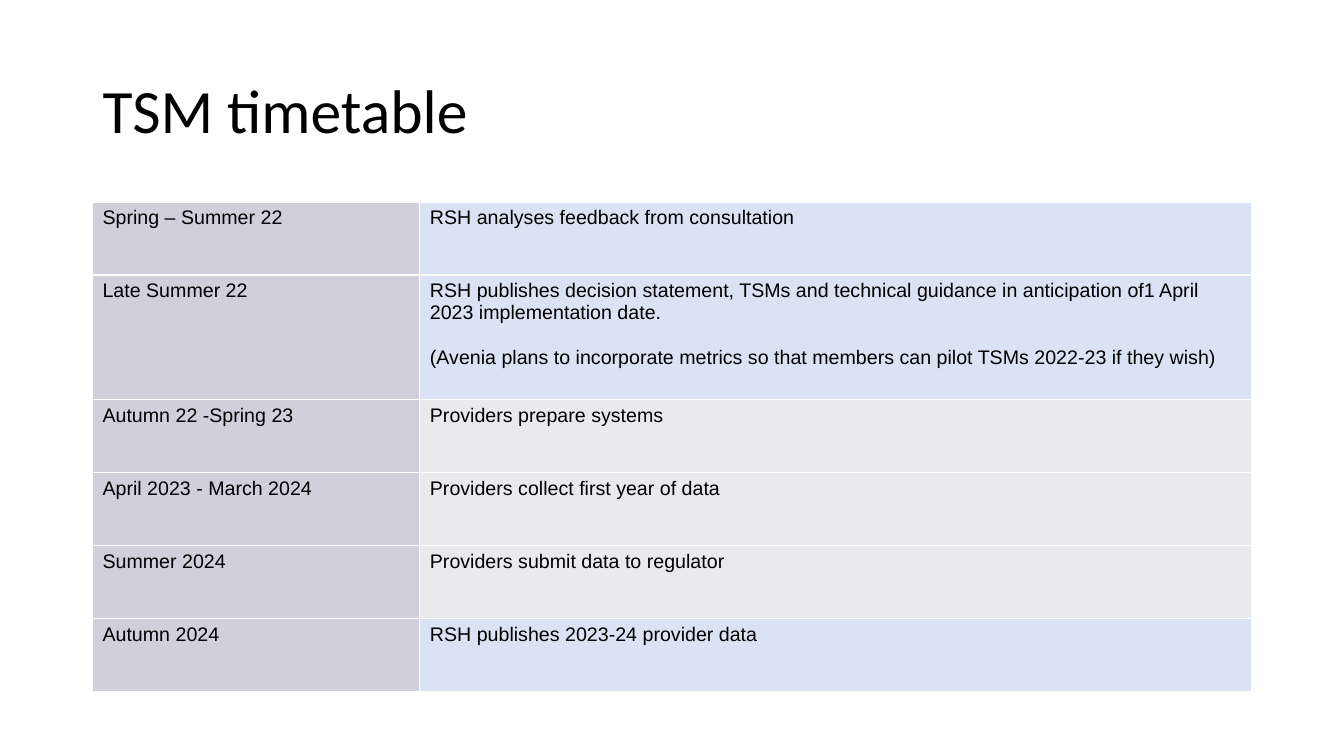
from dataclasses import dataclass

from lxml.etree import SubElement
from pptx import Presentation
from pptx.dml.color import RGBColor
from pptx.enum.text import MSO_ANCHOR, PP_ALIGN
from pptx.oxml.ns import qn
from pptx.util import Cm, Pt


@dataclass(frozen=True)
class Theme:
    """Colours, fonts and type sizes of the slide."""
    text: str = "000000"
    border: str = "FFFFFF"
    period: str = "D1CFDB"
    regulator: str = "DAE3F3"
    provider: str = "EAE9EE"
    title_font: str = "Calibri"
    body_font: str = "Arial"
    title_size: int = 44
    body_size: int = 14
    paragraph_gap: int = 16
    border_width: int = 1


THEME = Theme()
LEFT, WIDTH = Cm(2.33), Cm(29.21)
COLUMN_WIDTHS = (Cm(8.25), Cm(20.96))
ROW_HEIGHT, TALL_ROW_HEIGHT = Cm(1.84), Cm(3.13)

TIMETABLE = [
    ("Spring – Summer 22", ["RSH analyses feedback from consultation"], THEME.regulator),
    ("Late Summer 22", [
        "RSH publishes decision statement, TSMs and technical guidance in "
        "anticipation of1 April 2023 implementation date.",
        "(Avenia plans to incorporate metrics so that members can pilot TSMs "
        "2022-23 if they wish)",
    ], THEME.regulator),
    ("Autumn 22 -Spring 23", ["Providers prepare systems"], THEME.provider),
    ("April 2023 - March 2024", ["Providers collect first year of data"], THEME.provider),
    ("Summer 2024", ["Providers submit data to regulator"], THEME.provider),
    ("Autumn 2024", ["RSH publishes 2023-24 provider data"], THEME.regulator),
]


def style_font(font, name, size):
    """Set the typeface, size and text colour."""
    font.name = name
    font.size = Pt(size)
    font.bold = False
    font.color.rgb = RGBColor.from_string(THEME.text)


def set_title(page, text):
    """Place and format the title placeholder."""
    title = page.shapes.title
    title.left, title.top, title.width, title.height = LEFT, Cm(1.01), WIDTH, Cm(3.68)
    frame = title.text_frame
    frame.text = text
    frame.vertical_anchor = MSO_ANCHOR.MIDDLE
    para = frame.paragraphs[0]
    para.alignment = PP_ALIGN.LEFT
    para.line_spacing = 0.9
    style_font(para.font, THEME.title_font, THEME.title_size)


def add_borders(cell):
    """Draw a thin line on every side of a cell."""
    properties = cell._tc.get_or_add_tcPr()
    for position, side in enumerate(("a:lnL", "a:lnR", "a:lnT", "a:lnB")):
        line = SubElement(properties, qn(side), w=str(Pt(THEME.border_width)))
        fill = SubElement(line, qn("a:solidFill"))
        SubElement(fill, qn("a:srgbClr"), val=THEME.border)
        properties.insert(position, line)


def fill_cell(cell, texts, colour):
    """Write paragraphs into a cell and colour it."""
    cell.fill.solid()
    cell.fill.fore_color.rgb = RGBColor.from_string(colour)
    add_borders(cell)
    frame = cell.text_frame
    for index, text in enumerate(texts):
        para = frame.add_paragraph() if index else frame.paragraphs[0]
        para.text = text
        para.space_before = Pt(THEME.paragraph_gap if index else 0)
        style_font(para.font, THEME.body_font, THEME.body_size)


def add_timetable(page, entries):
    """Add the table of periods and activities."""
    heights = [TALL_ROW_HEIGHT if len(texts) > 1 else ROW_HEIGHT for _, texts, _ in entries]
    frame = page.shapes.add_table(len(entries), 2, LEFT, Cm(5.09), WIDTH, sum(heights))
    table = frame.table
    table.first_row = table.horz_banding = False
    for column, width in zip(table.columns, COLUMN_WIDTHS):
        column.width = width
    for row, height, (period, texts, colour) in zip(table.rows, heights, entries):
        row.height = height
        fill_cell(row.cells[0], [period], THEME.period)
        fill_cell(row.cells[1], texts, colour)


def main():
    """Build and save the timetable slide."""
    deck = Presentation()
    deck.slide_width, deck.slide_height = Cm(33.87), Cm(19.05)
    page = deck.slides.add_slide(deck.slide_layouts.get_by_name("Title Only"))
    set_title(page, "TSM timetable")
    add_timetable(page, TIMETABLE)
    deck.save("out.pptx")


if __name__ == "__main__":
    main()
